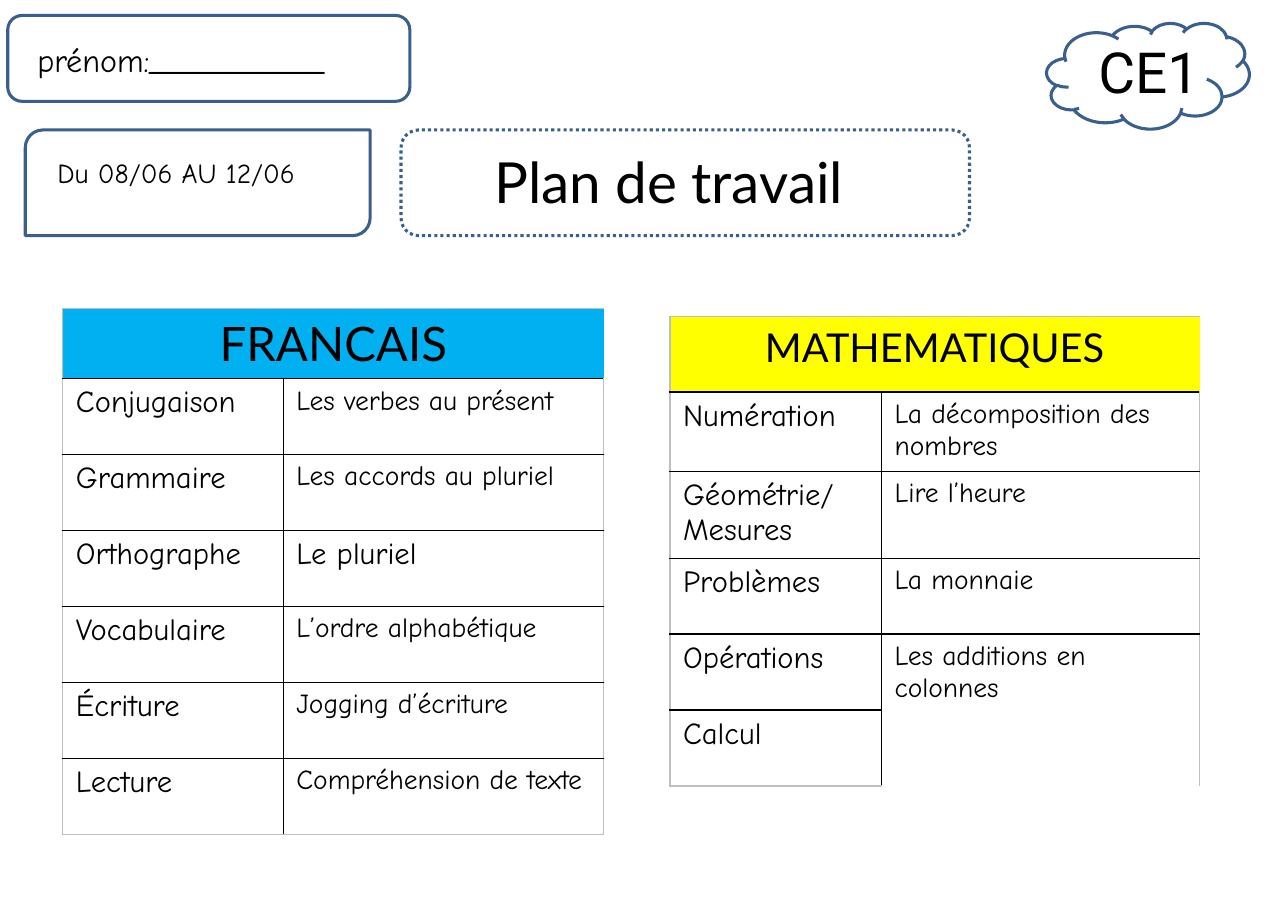
import lxml.etree
import pptx
import pptx.dml.color
import pptx.enum.dml
import pptx.enum.shapes
import pptx.enum.text
import pptx.oxml.ns
import pptx.util

Inches = pptx.util.Inches
SHAPES = pptx.enum.shapes.MSO_SHAPE
ALIGN = pptx.enum.text.PP_ALIGN
BLACK, WHITE, BORDER, GREY = "000000", "FFFFFF", "3A5F8C", "BFBFBF"
HANDWRITING, HEADING = "Comic Neue", "Lato"
EDGES = {"lnL": (0, -1), "lnR": (0, 1), "lnT": (-1, 0), "lnB": (1, 0)}

FRENCH = [
    ("Conjugaison", "Les verbes au présent", 18),
    ("Grammaire", "Les accords au pluriel", 18),
    ("Orthographe", "Le pluriel", 20),
    ("Vocabulaire", "L’ordre alphabétique", 18),
    ("Écriture", "Jogging d’écriture", 18),
    ("Lecture", "Compréhension de texte", 18),
]
MATHS = [
    ("Numération", "La décomposition des nombres", 18),
    ("Géométrie/\nMesures", "Lire l’heure", 18),
    ("Problèmes", "La monnaie", 18),
    ("Opérations", "Les additions en colonnes", 18),
    ("Calcul", "", 18),
]


def colour(value):
    """Turn a hex string into a colour."""
    return pptx.dml.color.RGBColor.from_string(value)


def place(item, left, top, width, height):
    """Set position and size in inches."""
    item.left, item.top = Inches(left), Inches(top)
    item.width, item.height = Inches(width), Inches(height)


def write(frame, text, size, font, align=ALIGN.LEFT):
    """Fill a text frame and format its paragraphs."""
    frame.text = text
    for paragraph in frame.paragraphs:
        paragraph.alignment = align
        paragraph.font.size = pptx.util.Pt(size)
        paragraph.font.name = font
        paragraph.font.color.rgb = colour(BLACK)


def set_margins(item, side, end):
    """Set the inner margins of a text frame or a cell."""
    item.margin_left = item.margin_right = Inches(side)
    item.margin_top = item.margin_bottom = Inches(end)


def add_frame(slide, preset, left, top, width, height, dash=None):
    """Add an outlined white shape."""
    frame = slide.shapes.add_shape(
        preset, Inches(left), Inches(top), Inches(width), Inches(height))
    frame.shadow.inherit = False
    frame.fill.solid()
    frame.fill.fore_color.rgb = colour(WHITE)
    frame.line.color.rgb = colour(BORDER)
    frame.line.width = pptx.util.Pt(2)
    if dash:
        frame.line.dash_style = dash
    return frame


def format_label(label, text, size, font, align=ALIGN.LEFT):
    """Format a text box or placeholder and write its text."""
    frame = label.text_frame
    frame.word_wrap = True
    frame.auto_size = pptx.enum.text.MSO_AUTO_SIZE.SHAPE_TO_FIT_TEXT
    frame.vertical_anchor = pptx.enum.text.MSO_ANCHOR.TOP
    set_margins(frame, 0.11, 0.06)
    write(frame, text, size, font, align)


def add_label(slide, text, left, top, width, height, size, font):
    """Add a text box."""
    label = slide.shapes.add_textbox(
        Inches(left), Inches(top), Inches(width), Inches(height))
    format_label(label, text, size, font)


def add_title(slide, frame, text, left, top, width, height):
    """Move the title placeholder in front of its frame and write it."""
    title = slide.shapes.title
    frame.element.addnext(title.element)
    place(title, left, top, width, height)
    format_label(title, text, 37, HEADING, ALIGN.CENTER)


def set_borders(table):
    """Draw grey outer edges, black inner edges and none inside merges."""
    rows, columns = len(table.rows), len(table.columns)
    for row in range(rows):
        for column in range(columns):
            cell = table.cell(row, column)
            properties = cell._tc.get_or_add_tcPr()
            for index, (tag, (down, right)) in enumerate(EDGES.items()):
                inner = 0 <= row + down < rows and 0 <= column + right < columns
                joined = inner and all(
                    part.is_merge_origin or part.is_spanned
                    for part in (cell, table.cell(row + down, column + right)))
                edge = lxml.etree.Element(pptx.oxml.ns.qn(f"a:{tag}"), w="12700")
                properties.insert(index, edge)
                if joined:
                    lxml.etree.SubElement(edge, pptx.oxml.ns.qn("a:noFill"))
                    continue
                fill = lxml.etree.SubElement(edge, pptx.oxml.ns.qn("a:solidFill"))
                lxml.etree.SubElement(fill, pptx.oxml.ns.qn("a:srgbClr"),
                                      val=BLACK if inner else GREY)


def add_plan(slide, heading, size, fill, lessons, left, top, widths, heights):
    """Add a subject table with a merged heading row."""
    table = slide.shapes.add_table(
        len(heights), len(widths), Inches(left), Inches(top),
        Inches(sum(widths)), Inches(sum(heights))).table
    table.first_row = table.horz_banding = False
    for column, width in zip(table.columns, widths):
        column.width = Inches(width)
    for row, height in zip(table.rows, heights):
        row.height = Inches(height)
    for cell in table.iter_cells():
        set_margins(cell, 0.12, 0.06)
        cell.fill.background()
    title = table.cell(0, 0)
    title.merge(table.cell(0, 1))
    title.fill.solid()
    title.fill.fore_color.rgb = colour(fill)
    write(title.text_frame, heading, size, HEADING, ALIGN.CENTER)
    for row, (topic, lesson, lesson_size) in enumerate(lessons, 1):
        write(table.cell(row, 0).text_frame, topic, 20, HANDWRITING)
        write(table.cell(row, 1).text_frame, lesson, lesson_size, HANDWRITING)
        if not lesson:
            table.cell(row - 1, 1).merge(table.cell(row, 1))
    set_borders(table)


def main():
    """Build the weekly work plan."""
    presentation = pptx.Presentation()
    presentation.slide_width = Inches(11.69)
    presentation.slide_height = Inches(8.27)
    slide = presentation.slides.add_slide(presentation.slide_layouts[5])

    add_frame(slide, SHAPES.ROUNDED_RECTANGLE, 0.07, 0.14, 3.65, 0.78)
    add_label(slide, "prénom:___________", 0.23, 0.31, 3.5, 0.47, 21, HANDWRITING)
    title_frame = add_frame(slide, SHAPES.ROUNDED_RECTANGLE, 3.64, 1.18, 5.16, 0.96,
                            pptx.enum.dml.MSO_LINE.ROUND_DOT)
    add_title(slide, title_frame, "Plan de travail", 3.68, 1.27, 4.78, 0.74)
    add_frame(slide, SHAPES.CLOUD, 9.5, 0.21, 1.84, 0.96)
    add_label(slide, "CE1", 9.86, 0.28, 1.42, 0.74, 37, "Roboto")

    add_plan(slide, "FRANCAIS", 31, "00B0F0", FRENCH, 0.57, 2.8,
             [2, 2.91], [0.58] + [0.69] * 6)
    add_plan(slide, "MATHEMATIQUES", 26, "FFFF00", MATHS, 6.08, 2.87,
             [1.92, 2.89], [0.69] * 6)

    add_frame(slide, SHAPES.ROUND_2_DIAG_RECTANGLE, 0.23, 1.18, 3.13, 0.96)
    add_label(slide, "Du 08/06 AU 12/06", 0.41, 1.36, 2.85, 0.42, 18, HANDWRITING)
    presentation.save("out.pptx")


if __name__ == "__main__":
    main()
